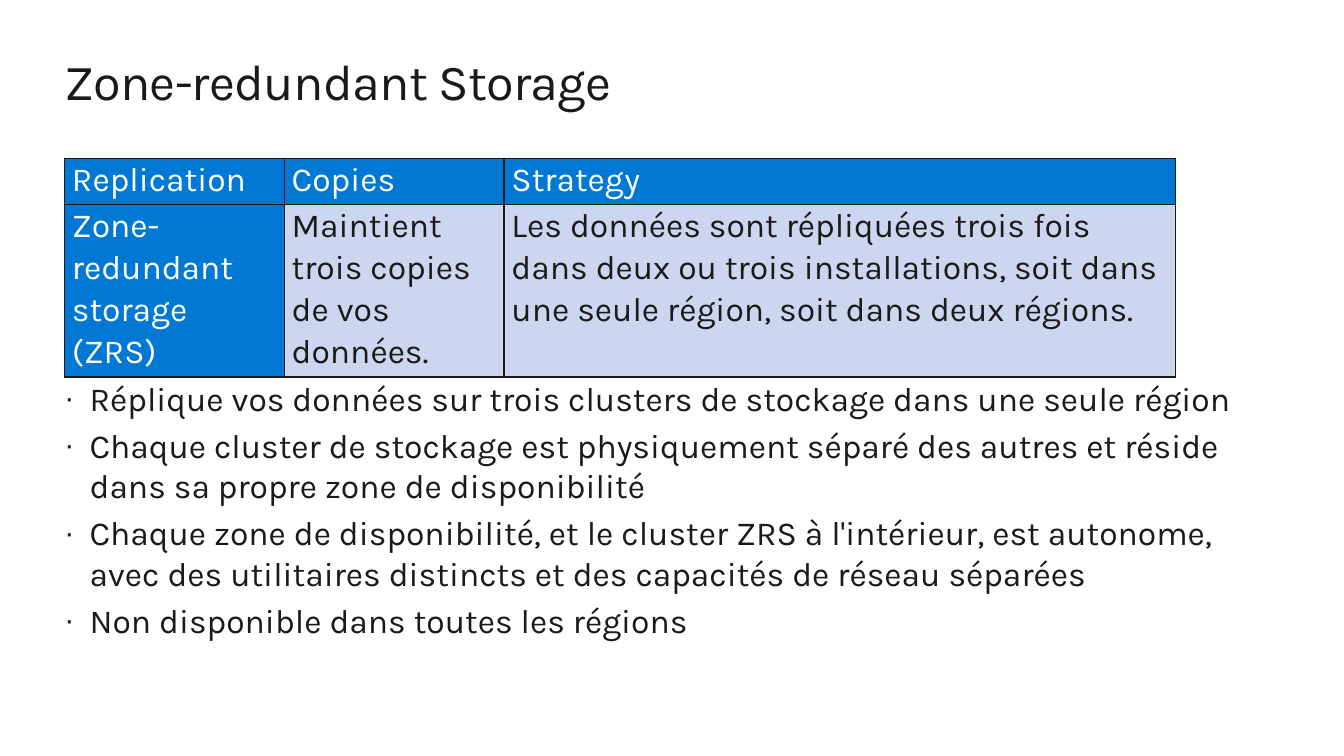
from pptx import Presentation
from pptx.dml.color import RGBColor
from pptx.enum.text import MSO_ANCHOR, MSO_AUTO_SIZE, PP_ALIGN
from pptx.oxml import parse_xml
from pptx.oxml.ns import nsdecls
from pptx.util import Pt

TOP, LEFT = MSO_ANCHOR.TOP, PP_ALIGN.LEFT
GROW = MSO_AUTO_SIZE.SHAPE_TO_FIT_TEXT

TITLE = "Zone-redundant Storage"
ROWS = [
    ["Replication", "Copies", "Strategy"],
    [
        "Zone-redundant storage (ZRS)",
        "Maintient trois copies de vos données.",
        "Les données sont répliquées trois fois dans deux ou trois "
        "installations, soit dans une seule région, soit dans deux régions.",
    ],
]
POINTS = [
    "Réplique vos données sur trois clusters de stockage dans une seule région",
    "Chaque cluster de stockage est physiquement séparé des autres et réside "
    "dans sa propre zone de disponibilité",
    "Chaque zone de disponibilité, et le cluster ZRS à l'intérieur, est autonome, "
    "avec des utilitaires distincts et des capacités de réseau séparées",
    "Non disponible dans toutes les régions",
]

THEME = {
    "font": "Karla",
    "ink": "1A1A1A",
    "head": "0078D4",
    "cell": "CCD6EF",
    "white": "FFFFFF",
    "title": 36,
    "text": 24,
}
EDGE, WIDTH = 46, 868
COLS = [157, 157, 479.5]
HEIGHTS = [33, 68]
INDENT = Pt(18)


def style(para, size, color):
    for run in para.runs:
        run.font.name = THEME["font"]
        run.font.size = Pt(size)
        run.font.color.rgb = RGBColor.from_string(color)


def place(holder, top, height):
    holder.left, holder.top = Pt(EDGE), Pt(top)
    holder.width, holder.height = Pt(WIDTH), Pt(height)
    frame = holder.text_frame
    frame.margin_left = frame.margin_right = 0
    frame.margin_top = frame.margin_bottom = 0
    frame.vertical_anchor = TOP
    frame.word_wrap = True
    frame.auto_size = GROW
    return frame


def add_title(slide):
    frame = place(slide.shapes.title, 36, 44)
    frame.text = TITLE
    para = frame.paragraphs[0]
    para.alignment = LEFT
    style(para, THEME["title"], THEME["ink"])
    para.runs[0].font._element.set("spc", "-50")


def add_points(slide):
    frame = place(slide.placeholders[1], 270, 198)
    frame.text = "\n".join(POINTS)
    for para in frame.paragraphs:
        style(para, THEME["text"], THEME["ink"])
        para.space_before = Pt(0.2 * THEME["text"])
        props = para._p.get_or_add_pPr()
        props.set("marL", str(INDENT))
        props.set("indent", str(-INDENT))
        for mark in ('buSzPct {} val="90000"', 'buChar {} char="·"'):
            props.append(parse_xml(f"<a:{mark.format(nsdecls('a'))}/>"))


def border(cell):
    props = cell._tc.get_or_add_tcPr()
    for n, side in enumerate(("lnL", "lnR", "lnT", "lnB")):
        props.insert(n, parse_xml(
            f'<a:{side} {nsdecls("a")} w="{Pt(1)}"><a:solidFill>'
            f'<a:srgbClr val="{THEME["ink"]}"/></a:solidFill></a:{side}>'))


def add_grid(slide):
    grid = slide.shapes.add_table(
        len(ROWS), len(COLS), Pt(EDGE), Pt(113), Pt(sum(COLS)), Pt(sum(HEIGHTS))
    ).table
    for col, width in zip(grid.columns, COLS):
        col.width = Pt(width)
    for r, words in enumerate(ROWS):
        grid.rows[r].height = Pt(HEIGHTS[r])
        for c, text in enumerate(words):
            head = r == 0 or c == 0
            cell = grid.cell(r, c)
            cell.text = text
            cell.margin_left = cell.margin_right = Pt(5.4)
            cell.margin_top = cell.margin_bottom = 0
            cell.fill.solid()
            cell.fill.fore_color.rgb = RGBColor.from_string(
                THEME["head" if head else "cell"])
            border(cell)
            para = cell.text_frame.paragraphs[0]
            para.line_spacing = 1.07
            style(para, THEME["text"], THEME["white" if head else "ink"])
            para.runs[0].font.bold = False


def main():
    deck = Presentation()
    deck.slide_width, deck.slide_height = Pt(960), Pt(540)
    slide = deck.slides.add_slide(deck.slide_layouts[1])
    add_title(slide)
    add_points(slide)
    add_grid(slide)
    deck.save("out.pptx")


if __name__ == "__main__":
    main()
